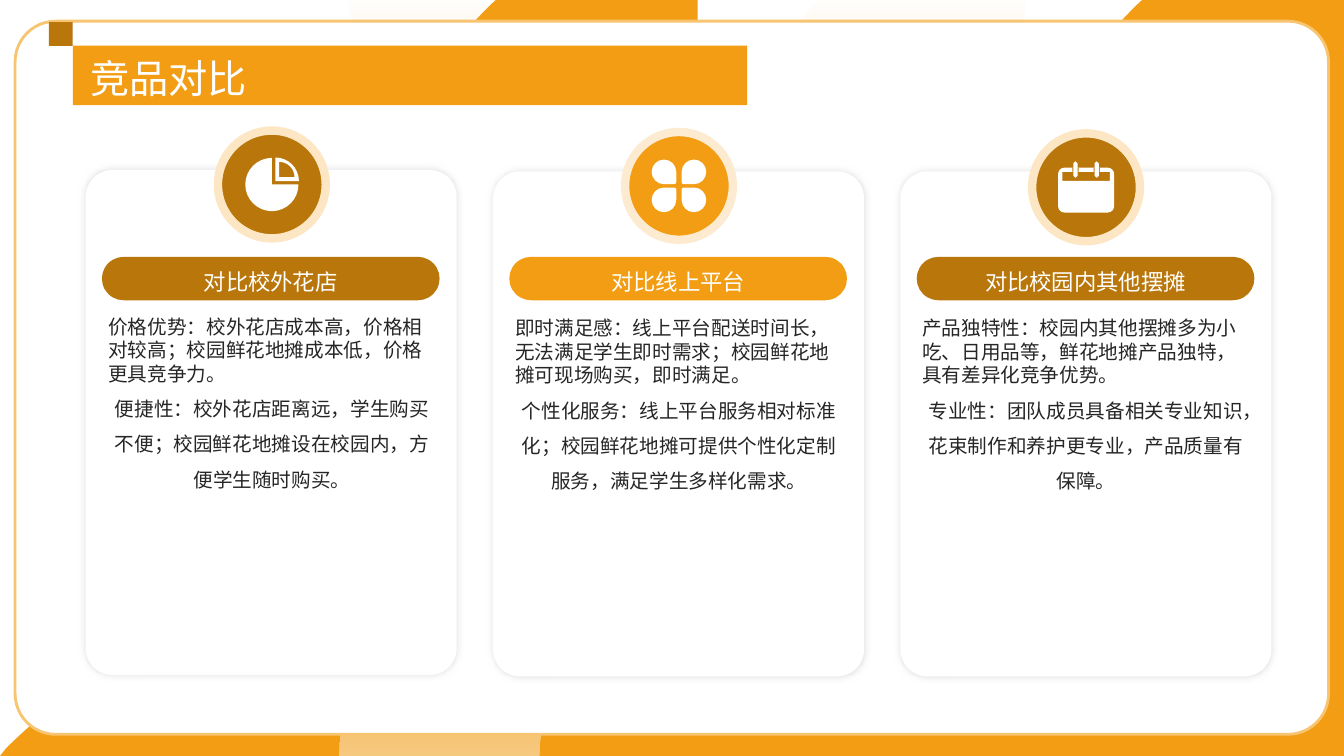
from math import asin, cos, degrees, radians, sin, tan

from pptx import Presentation
from pptx.dml.color import RGBColor as Rgb
from pptx.enum.shapes import MSO_SHAPE as Kind
from pptx.enum.text import MSO_ANCHOR as Anchor, PP_ALIGN as Align
from pptx.oxml import parse_xml
from pptx.oxml.ns import nsdecls, qn
from pptx.util import Pt

# Content
TITLE = "竞品对比"
CARDS = [
    ("对比校外花店", "brown", "ring", "pie",
     "价格优势：校外花店成本高，价格相对较高；校园鲜花地摊成本低，价格更具竞争力。",
     "便捷性：校外花店距离远，学生购买不便；校园鲜花地摊设在校园内，方便学生随时购买。"),
    ("对比线上平台", "orange", "pale", "clover",
     "即时满足感：线上平台配送时间长，无法满足学生即时需求；校园鲜花地摊可现场购买，即时满足。",
     "个性化服务：线上平台服务相对标准化；校园鲜花地摊可提供个性化定制服务，满足学生多样化需求。"),
    ("对比校园内其他摆摊", "brown", "ring", "calendar",
     "产品独特性：校园内其他摆摊多为小吃、日用品等，鲜花地摊产品独特，具有差异化竞争优势。",
     "专业性：团队成员具备相关专业知识，花束制作和养护更专业，产品质量有保障。"),
]
FONT = "Noto Sans CJK SC"
HUES = {"orange": "F29D13", "brown": "B9760A", "pale": "FCEBD0", "ring": "FCE6C3",
        "edge": "F7C471", "white": "FFFFFF", "ink": "262626", "shade": "D9D9D9"}
WIDE, HIGH = 960, 540

deck = Presentation()
deck.slide_width, deck.slide_height = Pt(WIDE), Pt(HIGH)
slide = deck.slides.add_slide(deck.slide_layouts[6])
shapes = slide.shapes


def hue(name):
    return Rgb.from_string(HUES[name])


def paint(shape, fill, line=None, width=0):
    shape.shadow.inherit = False
    shape.fill.solid()
    shape.fill.fore_color.rgb = hue(fill)
    if line:
        shape.line.color.rgb = hue(line)
        shape.line.width = Pt(width)
    else:
        shape.line.fill.background()


def block(kind, x, y, w, h, fill, line=None, width=0, bend=None):
    shape = shapes.add_shape(kind, Pt(x), Pt(y), Pt(w), Pt(h))
    if bend is not None:
        shape.adjustments[0] = bend
    paint(shape, fill, line, width)
    return shape


def write(x, y, w, h, lines, size, color, anchor=Anchor.MIDDLE):
    """Each line is a tuple of text, alignment and line spacing."""
    frame = shapes.add_textbox(Pt(x), Pt(y), Pt(w), Pt(h)).text_frame
    frame.word_wrap, frame.vertical_anchor = True, anchor
    frame.margin_left = frame.margin_right = frame.margin_top = frame.margin_bottom = 0
    for i, (text, align, space) in enumerate(lines):
        para = frame.add_paragraph() if i else frame.paragraphs[0]
        para.text, para.alignment, para.line_spacing = text, align, space
        for run in para.runs:
            run.font.size, run.font.name = Pt(size), FONT
            run.font.color.rgb = hue(color)
            east = run.font._element.makeelement(qn("a:ea"), {"typeface": FONT})
            run.font._element.find(qn("a:latin")).addnext(east)


# Outlines: lists of steps, one point for a line and three for a curve
def dots(*spots):
    return [(spot,) for spot in spots]


def arc(cx, cy, r, start, end, step=90):
    """Angles run counterclockwise from the right; split at each step."""
    ticks = [t for t in range(-360, 721, step) if min(start, end) < t < max(start, end)]
    turns = [radians(t) for t in [start, *sorted(ticks, reverse=start > end), end]]

    def spot(t, k=0):
        return cx + r * (cos(t) - k * sin(t)), cy - r * (sin(t) + k * cos(t))

    loop = dots(spot(turns[0]))
    for a, b in zip(turns, turns[1:]):
        k = 4 / 3 * tan((b - a) / 4)
        loop.append((spot(a, k), spot(b, -k), spot(b)))
    return loop


def box(left, top, right, low, r=0):
    if not r:
        return dots((left, top), (right, top), (right, low), (left, low))
    return (arc(right - r, top + r, r, 90, 0) + arc(right - r, low - r, r, 0, -90)
            + arc(left + r, low - r, r, 270, 180) + arc(left + r, top + r, r, 180, 90))


def spin(x, y, turn):
    c, s = cos(radians(turn)), sin(radians(turn))
    return x * c - y * s, x * s + y * c


def draw(loops, fill, dx=0, dy=0, turn=0):
    pen, sizes = None, []
    for loop in loops:
        spots = [tuple(Pt(v) for v in spin(x + dx, y + dy, -turn)) for leg in loop for x, y in leg]
        if pen:
            pen.move_to(*spots[0])
        else:
            pen = shapes.build_freeform(*spots[0])
        pen.add_line_segments(spots[1:], close=True)
        sizes += [len(leg) for leg in loop[1:]]
    shape = pen.convert_to_shape()
    legs = iter(list(shape._element.iter(qn("a:lnTo"))))
    for size in sizes:
        group = [next(legs) for _ in range(size)]
        if size == 3:
            curve = group[0].makeelement(qn("a:cubicBezTo"), {})
            group[0].addprevious(curve)
            for leg in group:
                curve.append(leg[0])
                leg.getparent().remove(leg)
    mx, my = spin(shape.left + shape.width / 2, shape.top + shape.height / 2, turn)
    shape.left, shape.top = round(mx - shape.width / 2), round(my - shape.height / 2)
    shape.rotation = turn
    paint(shape, fill)
    return shape


def band(cy, outer, inner):
    """Half ring with a gradient that fades upwards."""
    loop = arc(490.8, cy, 248.4, *outer, 45) + arc(490.8, cy, 105.8, *inner, 45)
    shape = draw([loop], "pale", turn=225)
    shape.fill.gradient()
    shape.fill.gradient_angle = 315
    for stop, name in zip(shape.fill.gradient_stops, ("pale", "orange")):
        stop.color.rgb = hue(name)
    tint = list(shape._element.spPr.iter(qn("a:srgbClr")))[1]
    tint.append(tint.makeelement(qn("a:alpha"), {"val": "0"}))


def fans(dx):
    """Low dome and tall side piece."""
    edge = 498.3
    dome = arc(270, 800.6, 376, 135, 53.2) + dots((edge, 502), (edge, HIGH), (0, HIGH))
    side = arc(615.6, 270, 376, 135, 225) + dots(
        (354.2, HIGH), (edge, HIGH), (edge, 0), (354.2, 0))
    draw([dome], "orange", dx, turn=90)
    draw([side], "orange", dx)


# Icons, centred on 0, 0
def petal(sx, sy):
    loop = arc(10.7, -10, 8.8, -90, 180) + arc(3.4, -2.7, 1.5, 180, 270)
    return [tuple((sx * x, sy * y) for x, y in leg) for leg in loop]


ICONS = {
    "pie": [arc(0, 0, 19, 90, 360) + dots((0, 0)),
            arc(2.5, -2.5, 16.8, 0, 90) + dots((2.5, -2.5)),
            arc(5.2, -5.2, 11, 0, 90) + dots((5.2, -5.2))],
    "clover": [petal(sx, sy) for sx in (1, -1) for sy in (1, -1)],
    "calendar": [box(-20, -14, 20, 18, 4.5), box(-17, -11, 17, -4.6)]
    + [loop for x in (-7.6, 7.6) for loop in (
        box(x - 2.2, -14, x + 2.2, -11), box(x - 1.5, -18.5, x + 1.5, -6.8, 1.4))],
}

# Background and frame
cut, notch = (degrees(asin(51.2 / r)) for r in (248.4, 105.8))
band(-53.3, (180 + cut, 360 - cut), (360 - notch, 180 + notch))
fans(0)
band(HIGH, (180, 0), (0, 180))
fans(WIDE - 498.3)
block(Kind.ROUNDED_RECTANGLE, 10.8, 15.1, 938.2, 509.4, "white", "edge", 2, 0.057)

# Cards
for i, (head, main, ring, icon, first, second) in enumerate(CARDS):
    drop = min(i, 1)
    card = block(Kind.ROUNDED_RECTANGLE, 61.2 + 291 * i, 121.4 + drop, 265, 360.7,
                 "white", bend=0.072)
    props = card._element.spPr
    props.remove(props.find(qn("a:effectLst")))
    props.append(parse_xml(
        f'<a:effectLst {nsdecls("a")}><a:outerShdw blurRad="{Pt(5)}" dist="0" dir="0" algn="ctr">'
        f'<a:srgbClr val="{HUES["shade"]}"><a:alpha val="90000"/></a:srgbClr>'
        '</a:outerShdw></a:effectLst>'))
    write(77.3 + 290.7 * i, 224.8 + drop, 234, 243,
          [(first, Align.LEFT, 1.0), (second, Align.CENTER, 1.5)], 14, "ink", Anchor.TOP)
    left = 72.8 + 291 * i
    block(Kind.ROUNDED_RECTANGLE, left, 183.5, 241.2, 31, main, bend=0.5)
    write(left, 183.5, 241.2, 31, [(head, Align.CENTER, 1.2)], 16, "white")
    mid, eye = 194.2 + 290.8 * i, 131.8 + i
    block(Kind.OVAL, mid - 38.5, eye - 38.5, 77, 77, main, ring, 6)
    draw(ICONS[icon], "white", mid, eye)

# Title
block(Kind.RECTANGLE, 35, 15.8, 17, 17, "brown")
block(Kind.RECTANGLE, 52, 32.6, 481.7, 42.5, "orange")
write(64.4, 35.3, 842, 36.7, [(TITLE, Align.LEFT, 1.1)], 28, "white")

deck.save("out.pptx")
